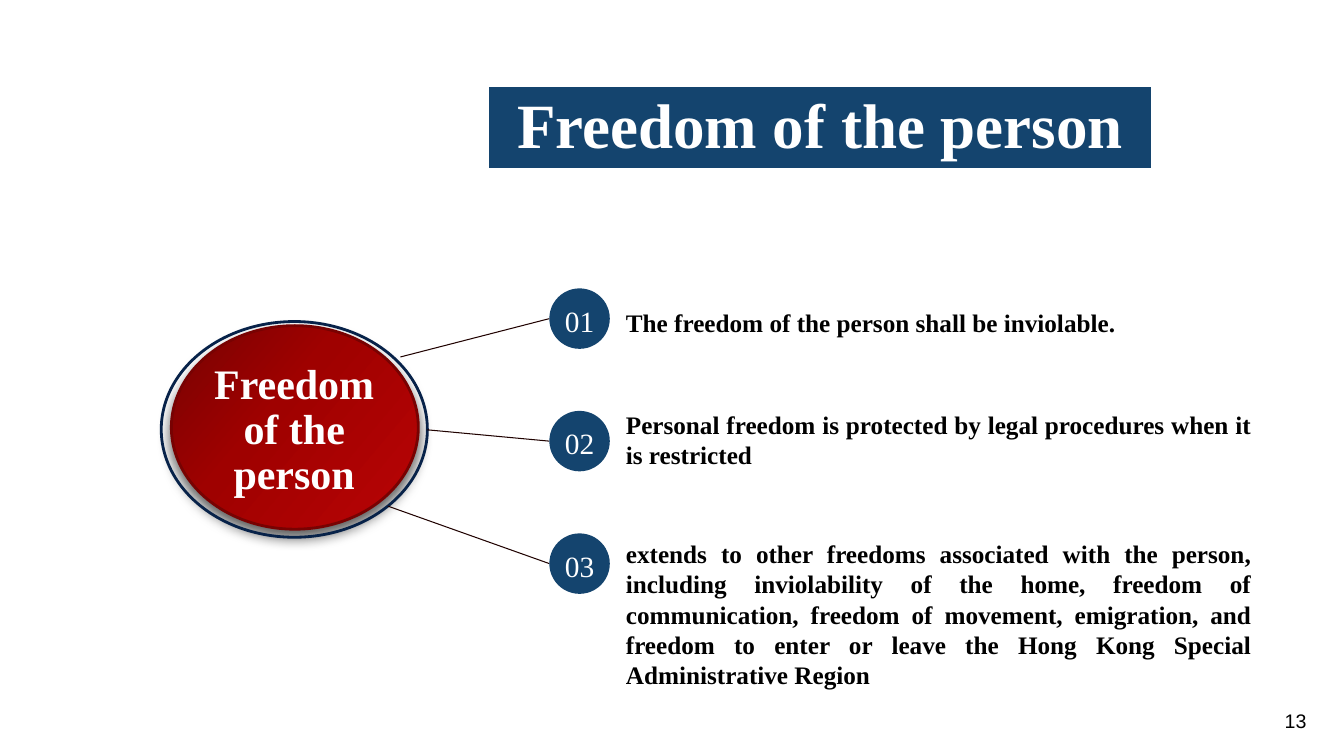
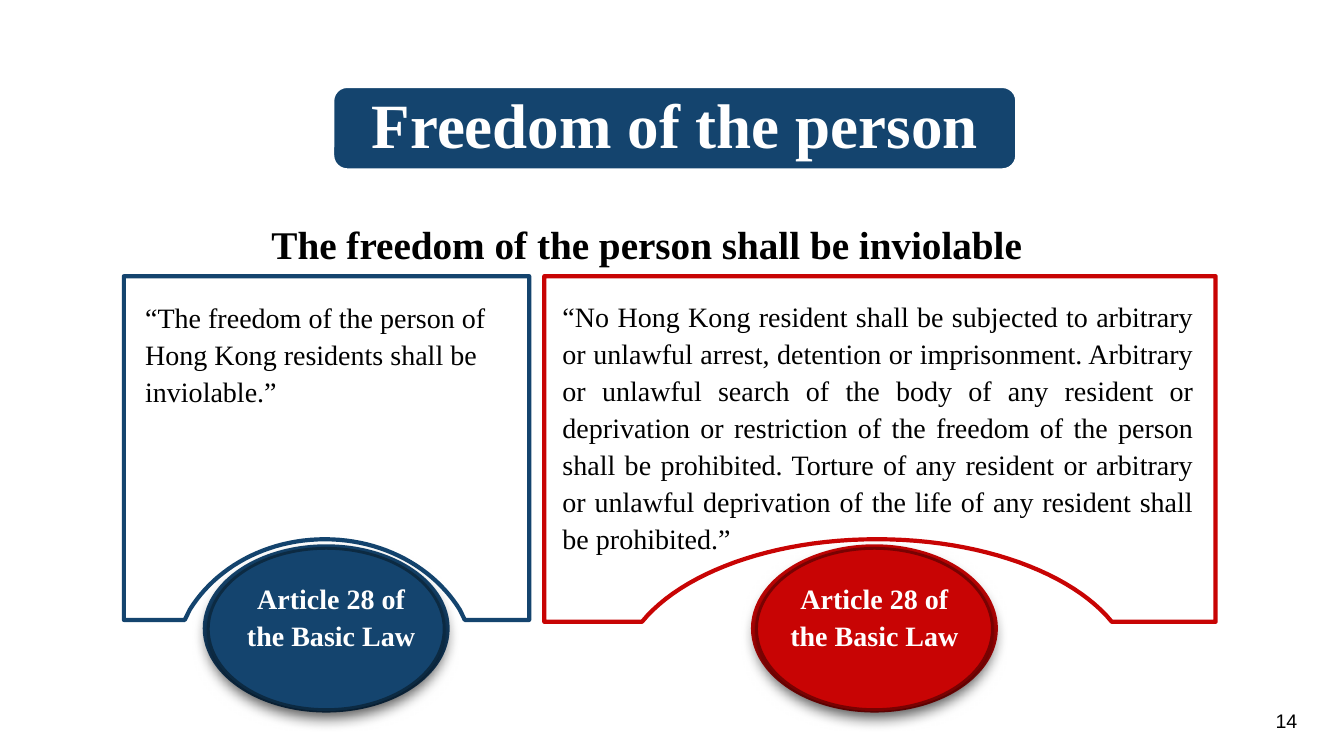
from pptx import Presentation, oxml
from pptx.dml.color import RGBColor
from pptx.enum import shapes, text
from pptx.oxml import ns
from pptx.util import Pt

# Shared look
COLORS = {
    "navy": "14446E", "navy_edge": "0C2A42", "ring": "072249",
    "red": "C80404", "red_edge": "780202", "link": "200200",
    "white": "FFFFFF", "black": "000000",
}
GRADIENT = [(12, "B30304"), (59, "9F0100"), (100, "780202")]
SERIF, SANS = "Times New Roman", "Arial"
SHAPE, ALIGN, ANCHOR = shapes.MSO_SHAPE, text.PP_ALIGN, text.MSO_ANCHOR
NO_MARGINS = (0, 0, 0, 0)
TITLE = "Freedom of the person"

# First slide: text, top of text, height of text, start of the link
BADGE_LEFT, BADGE_TOP, BADGE_STEP, BADGE_SIZE = 392.4, 206, 87.5, 43.2
POINTS = [
    ("The freedom of the person shall be inviolable.", 216, 29, (286, 255)),
    ("Personal freedom is protected by legal procedures when it is restricted",
     289, 51, (305, 307)),
    ("extends to other freedoms associated with the person, including "
     "inviolability of the home, freedom of communication, freedom of movement, "
     "emigration, and freedom to enter or leave the Hong Kong Special "
     "Administrative Region", 381, 117, (277, 361.5)),
]

# Second slide: notch gives the foot offset, then the curve's
# start and control points as (offset from centre, y)
SUBTITLE = "The freedom of the person shall be inviolable"
ARTICLE = "Article 28 of the Basic Law"
PANEL_TOP, CROWN = 197.3, 385.2
PANELS = [
    dict(color="navy", edge="navy_edge", left=88.5, right=378, bottom=442.8,
         centre=232, notch=(100, (96.5, 435.6), (77.8, 405.4), (41.8, CROWN)),
         label_centre=236.5, box=(103.7, 212.4, 265, 112), align=ALIGN.LEFT,
         quote="“The freedom of the person of Hong Kong residents shall be "
               "inviolable.”"),
    dict(color="red", edge="red_edge", left=388.8, right=868.3, bottom=444.2,
         centre=626.4, notch=(167.8, (167.8, 444.2), (139.7, 409.7), (75.6, CROWN)),
         label_centre=624.6, box=(401.8, 211.7, 450.7, 212), align=ALIGN.JUSTIFY,
         quote="“No Hong Kong resident shall be subjected to arbitrary or unlawful "
               "arrest, detention or imprisonment. Arbitrary or unlawful search of "
               "the body of any resident or deprivation or restriction of the "
               "freedom of the person shall be prohibited. Torture of any resident "
               "or arbitrary or unlawful deprivation of the life of any resident "
               "shall be prohibited.”"),
]


def rgb(name):
    return RGBColor.from_string(COLORS[name])


def element(tag, attributes="", inner=""):
    return oxml.parse_xml(f"<a:{tag} {ns.nsdecls('a')} {attributes}>{inner}</a:{tag}>")


def place(shape, box):
    shape.left, shape.top, shape.width, shape.height = map(Pt, box)


def write(shape, content, size=20, color="black", bold=False, font=SERIF,
          align=ALIGN.LEFT, anchor=ANCHOR.TOP, spacing=1.0,
          margins=(7.2, 3.6, 7.2, 3.6)):
    frame = shape.text_frame
    frame.word_wrap, frame.auto_size = True, text.MSO_AUTO_SIZE.NONE
    frame.vertical_anchor = anchor
    (frame.margin_left, frame.margin_top,
     frame.margin_right, frame.margin_bottom) = map(Pt, margins)
    para = frame.paragraphs[0]
    para.alignment, para.line_spacing = align, spacing
    span = para.add_run()
    span.text = content
    span.font.name, span.font.size, span.font.bold = font, Pt(size), bold
    span.font.color.rgb = rgb(color)


def add_text(page, box, content, **style):
    write(page.shapes.add_textbox(*map(Pt, box)), content, **style)


def paint(shape, fill=None, line=None, width=1):
    shape.shadow.inherit = False
    if fill:
        shape.fill.solid()
        shape.fill.fore_color.rgb = rgb(fill)
    else:
        shape.fill.background()
    if line:
        shape.line.color.rgb = rgb(line)
        shape.line.width = Pt(width)
    else:
        shape.line.fill.background()


def add_shape(page, kind, box, **style):
    shape = page.shapes.add_shape(kind, *map(Pt, box))
    paint(shape, **style)
    return shape


def drop_shadow(shape):
    effects = shape.element.spPr.find(ns.qn("a:effectLst"))
    effects.append(element(
        "outerShdw", f'blurRad="{Pt(10)}" dist="{Pt(5)}" dir="5400000" rotWithShape="0"',
        '<a:srgbClr val="000000"><a:alpha val="63000"/></a:srgbClr>'))


def apply_gradient(shape, stops, angle):
    marks = "".join(f'<a:gs pos="{pos * 1000}"><a:srgbClr val="{color}"/></a:gs>'
                    for pos, color in stops)
    plain = shape.element.spPr.find(ns.qn("a:solidFill"))
    plain.getparent().replace(plain, element(
        "gradFill", 'rotWithShape="1"',
        f'<a:gsLst>{marks}</a:gsLst><a:lin ang="{angle * 60000}" scaled="0"/>'))


def format_banner(shape):
    paint(shape, fill="navy", line="white")
    write(shape, TITLE, size=45, color="white", bold=True, align=ALIGN.CENTER,
          anchor=ANCHOR.MIDDLE, spacing=0.9, margins=(14.4, 2.2, 14.4, 2.2))


def add_page_number(page, number, right):
    add_text(page, (right - 60, 502.6, 60, 28.8), str(number), size=14, font=SANS,
             align=ALIGN.RIGHT)


def add_link(page, start, end):
    link = page.shapes.add_connector(shapes.MSO_CONNECTOR.STRAIGHT,
                                     *map(Pt, start + end))
    link.line.color.rgb, link.line.width = rgb("link"), Pt(0.75)
    link.element.spPr.append(element("effectLst"))


def curve(start, first, second, end, steps=24):
    """Points along a cubic curve."""
    result = []
    for step in range(steps + 1):
        t = step / steps
        weights = ((1 - t) ** 3, 3 * t * (1 - t) ** 2, 3 * t * t * (1 - t), t ** 3)
        result.append(tuple(sum(w * p[axis] for w, p in
                                zip(weights, (start, first, second, end)))
                            for axis in (0, 1)))
    return result


def add_panel(page, panel):
    left, right, bottom, centre = (panel[k] for k in ("left", "right", "bottom", "centre"))
    foot, *controls = panel["notch"]
    half = [(foot, bottom)] + curve(*controls, (0, CROWN))
    outline = [(left, PANEL_TOP), (right, PANEL_TOP), (right, bottom)]
    outline += [(centre + x, y) for x, y in half]
    outline += [(centre - x, y) for x, y in reversed(half[:-1])]
    outline += [(left, bottom)]
    corners = [(Pt(x), Pt(y)) for x, y in outline]
    builder = page.shapes.build_freeform(*corners[0])
    builder.add_line_segments(corners[1:], close=True)
    paint(builder.convert_to_shape(), line=panel["color"], width=3)


def add_seal(page, panel):
    middle = panel["label_centre"] if panel["color"] == "red" else panel["centre"] + 1
    rim = add_shape(page, SHAPE.DONUT, (middle - 88.2, 388.8, 176.4, 120.2),
                    fill=panel["color"])
    rim.adjustments[0] = 0.049
    drop_shadow(add_shape(page, SHAPE.OVAL, (middle - 84.2, 391.7, 168.5, 115.2),
                          fill=panel["color"], line=panel["edge"], width=2))
    add_text(page, (panel["label_centre"] - 63, 413.3, 126, 53.3), ARTICLE,
             color="white", bold=True, align=ALIGN.CENTER, spacing=1.1,
             margins=NO_MARGINS)


def build_overview(page):
    banner = page.shapes.title
    place(banner, (348.5, 62, 474.5, 58.3))
    banner.element.spPr.append(element("prstGeom", 'prst="roundRect"', "<a:avLst/>"))
    format_banner(banner)

    # Central topic
    topic = add_shape(page, SHAPE.OVAL, (122.4, 232.6, 176.4, 145.4), fill="red",
                      line="red_edge", width=2)
    apply_gradient(topic, GRADIENT, 220)
    drop_shadow(topic)
    add_shape(page, SHAPE.OVAL, (115.2, 229.7, 190.1, 154.1), line="ring", width=2)
    add_text(page, (134.6, 255.6, 151.2, 105), TITLE, size=30, color="white",
             bold=True, align=ALIGN.CENTER, spacing=0.9)

    # Numbered points
    for index, (content, top, height, start) in enumerate(POINTS):
        badge_top = BADGE_TOP + index * BADGE_STEP
        add_link(page, start, (BADGE_LEFT, badge_top + BADGE_SIZE / 2))
        badge = add_shape(page, SHAPE.OVAL,
                          (BADGE_LEFT, badge_top, BADGE_SIZE, BADGE_SIZE), fill="navy")
        write(badge, f"{index + 1:02}", size=21, color="white", align=ALIGN.CENTER,
              anchor=ANCHOR.MIDDLE, margins=(0, 3, 0, 0))
        add_text(page, (440, top, 461, height), content, size=18, bold=True,
                 align=ALIGN.JUSTIFY)
    add_page_number(page, 13, 940.3)


def build_article(page):
    heading = page.shapes.title
    place(heading, (163, 153.4, 598, 41))
    write(heading, SUBTITLE, size=28, bold=True, align=ALIGN.CENTER,
          anchor=ANCHOR.MIDDLE)
    for panel in PANELS:
        add_text(page, panel["box"], panel["quote"], align=panel["align"],
                 spacing=1.1, margins=NO_MARGINS)
        add_panel(page, panel)
        add_seal(page, panel)
    add_page_number(page, 14, 933.8)
    format_banner(page.shapes.add_shape(SHAPE.ROUNDED_RECTANGLE,
                                        *map(Pt, (238.3, 62.4, 487.4, 58.3))))


def main():
    deck = Presentation()
    deck.slide_width, deck.slide_height = Pt(960), Pt(540)
    for build in (build_overview, build_article):
        build(deck.slides.add_slide(deck.slide_layouts[5]))
    deck.save("out.pptx")


if __name__ == "__main__":
    main()
